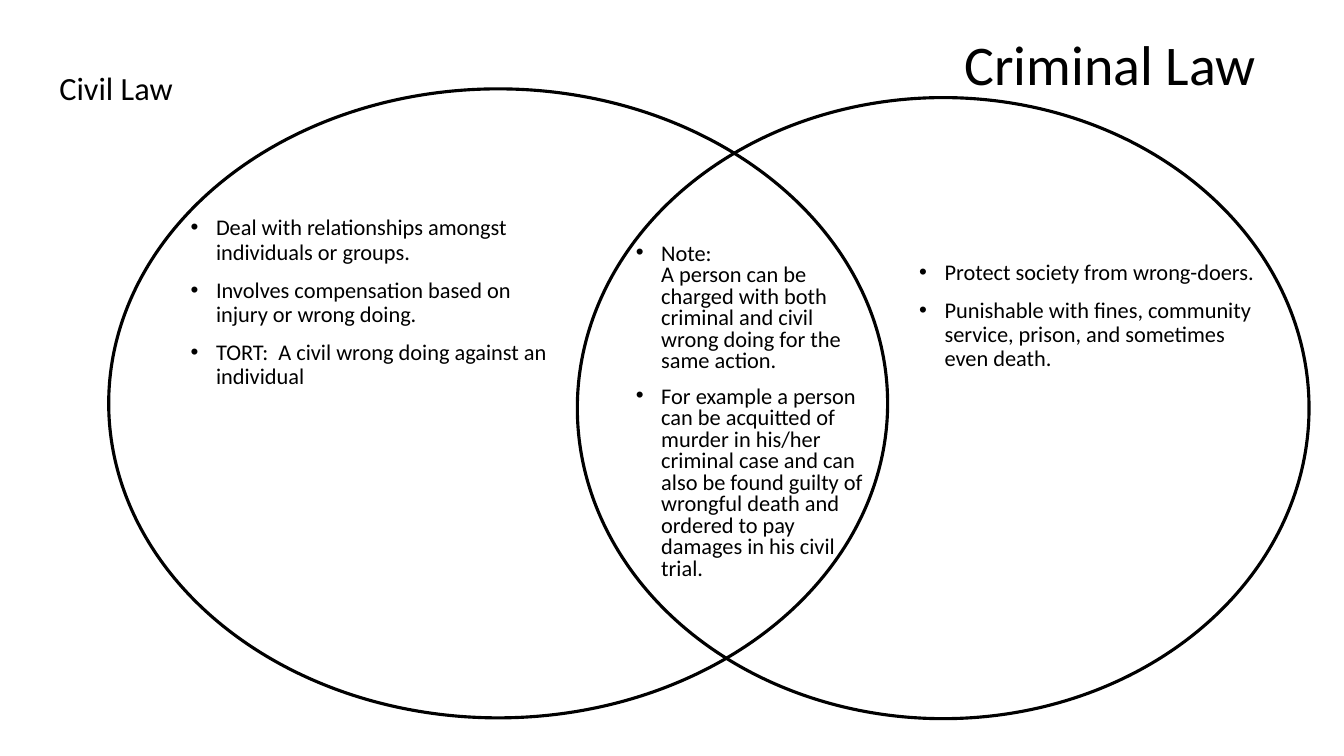
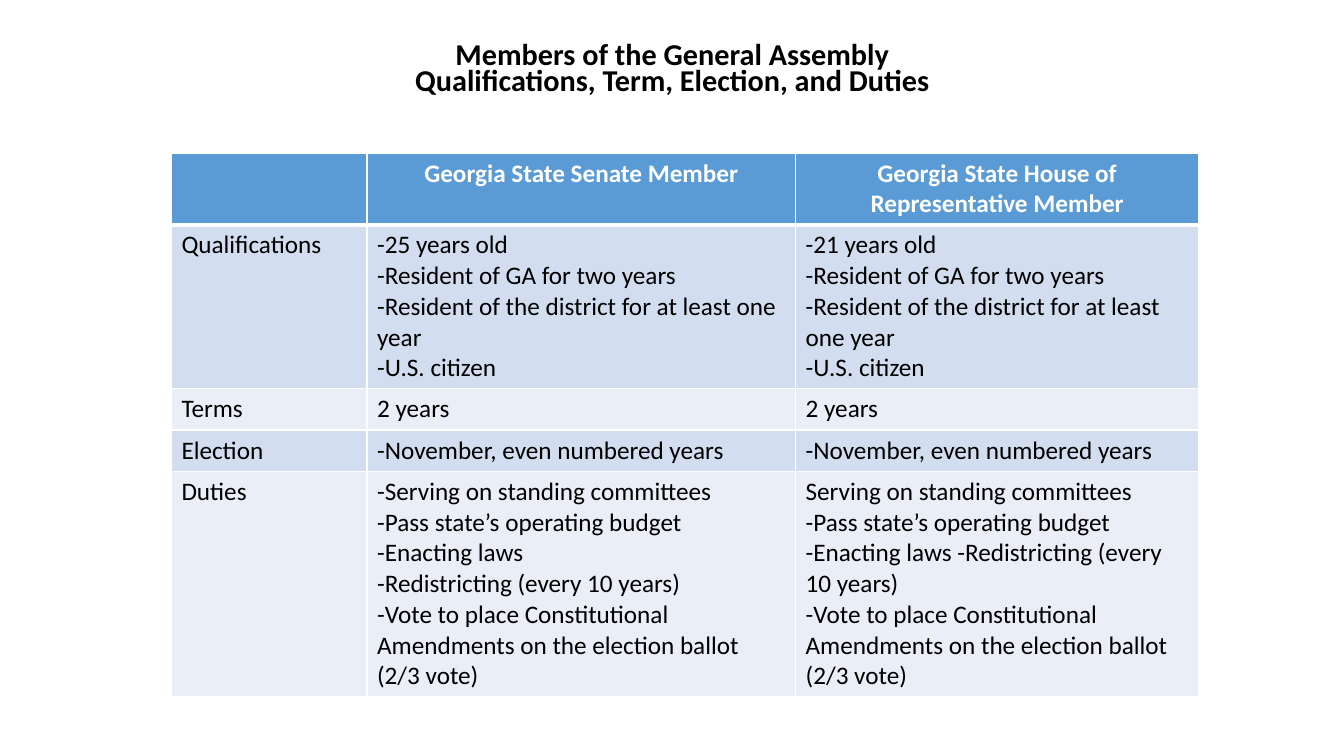
from dataclasses import dataclass

from lxml import etree
from pptx import Presentation
from pptx.dml.color import RGBColor
from pptx.enum.shapes import MSO_SHAPE
from pptx.enum.text import MSO_ANCHOR, MSO_AUTO_SIZE, PP_ALIGN
from pptx.oxml.ns import qn
from pptx.util import Cm, Pt

BLACK = RGBColor(0x00, 0x00, 0x00)
WHITE = RGBColor(0xFF, 0xFF, 0xFF)
HEADER_BLUE = RGBColor(0x5B, 0x9B, 0xD5)
BAND_DARK = RGBColor(0xD2, 0xDE, 0xEF)
BAND_LIGHT = RGBColor(0xEA, 0xEF, 0xF7)

FONT = "Calibri"
LEFT, CENTER = PP_ALIGN.LEFT, PP_ALIGN.CENTER
TOP, MIDDLE = MSO_ANCHOR.TOP, MSO_ANCHOR.MIDDLE
NO_AUTOFIT = MSO_AUTO_SIZE.NONE
OVAL = MSO_SHAPE.OVAL

TITLE_ONLY_LAYOUT = 5
COMPARISON_LAYOUT = 4
BULLET_INDENT = Cm(0.64)
THIN, THICK = Pt(1), Pt(3)


@dataclass(frozen=True)
class Box:
    """Position and size in centimetres."""
    left: float
    top: float
    width: float
    height: float

    def place(self, shape) -> None:
        shape.left, shape.top = Cm(self.left), Cm(self.top)
        shape.width, shape.height = Cm(self.width), Cm(self.height)


@dataclass(frozen=True)
class PointList:
    placeholder: int
    box: Box
    spacing: float
    points: tuple[str, ...]


@dataclass(frozen=True)
class Heading:
    placeholder: int
    box: Box
    text: str
    size: float
    spacing: float
    anchor: MSO_ANCHOR


LAW_CIRCLES = (Box(2.74, 2.24, 19.63, 15.85), Box(14.55, 2.46, 18.44, 15.65))

LAW_HEADINGS = (
    Heading(0, Box(1.24, 1.85, 5.94, 1.04), "Civil Law", 23.1, 0.7, TOP),
    Heading(1, Box(24.05, 1.19, 7.9, 1.04), "Criminal Law", 40, 0.9, MIDDLE),
)

LAW_LISTS = (
    PointList(2, Box(4.55, 5.33, 9.93, 9.96), 0.9, (
        "Deal with relationships amongst individuals or groups.",
        "Involves compensation based on injury or wrong doing.",
        "TORT:  A civil wrong doing against an individual",
    )),
    PointList(3, Box(15.77, 6.02, 6.25, 8.89), 0.8, (
        "Note:\nA person can be charged with both criminal and civil "
        "wrong doing for the same action.",
        "For example a person can be acquitted of murder in his/her criminal "
        "case and can also be found guilty of wrongful death and ordered to "
        "pay damages in his civil trial.",
    )),
    PointList(4, Box(22.91, 6.45, 9.02, 10.64), 0.9, (
        "Protect society from wrong-doers.",
        "Punishable with fines, community service, prison, and sometimes "
        "even death.",
    )),
)

ASSEMBLY_TITLE = ("Members of the General Assembly\n"
                  "Qualifications, Term, Election, and Duties")
ASSEMBLY_TITLE_BOX = Box(2.34, 1.02, 29.21, 1.7)
COLUMN_WIDTHS = (4.93, 10.8, 10.16)
ROW_HEIGHT = 1.04
RESIDENCY = (
    "-Resident of GA for two years",
    "-Resident of the district for at least one year",
    "-U.S. citizen",
)
BUDGET = "-Pass state’s operating budget"
AMENDMENTS = ("-Vote to place Constitutional Amendments on the election "
              "ballot (2/3 vote)")
ELECTION = ("-November, even numbered years",)
ASSEMBLY_ROWS = (
    ((), ("Georgia State Senate Member",),
     ("Georgia State House of Representative Member",)),
    (("Qualifications",), ("-25 years old", *RESIDENCY),
     ("-21 years old", *RESIDENCY)),
    (("Terms",), ("2 years",), ("2 years",)),
    (("Election",), ELECTION, ELECTION),
    (("Duties",),
     ("-Serving on standing committees", BUDGET, "-Enacting laws",
      "-Redistricting (every 10 years)", AMENDMENTS),
     ("Serving on standing committees", BUDGET,
      "-Enacting laws -Redistricting (every 10 years)", AMENDMENTS)),
)


def set_bullet(paragraph, bulleted: bool) -> None:
    properties = paragraph._p.get_or_add_pPr()
    indent = BULLET_INDENT if bulleted else 0
    properties.set("marL", str(indent))
    properties.set("indent", str(-indent))
    if bulleted:
        etree.SubElement(properties, qn("a:buFont"), typeface="Arial")
        etree.SubElement(properties, qn("a:buChar"), char="•")
    else:
        etree.SubElement(properties, qn("a:buNone"))


def write_text(frame, paragraphs: tuple[str, ...], *, size: float,
               color: RGBColor = BLACK, bold: bool = False,
               align: PP_ALIGN = LEFT, spacing: float = 1.0,
               before: float = 0, bulleted: bool = False) -> None:
    """Fill a text frame; a newline inside a paragraph is a line break."""
    for index, text in enumerate(paragraphs):
        paragraph = frame.add_paragraph() if index else frame.paragraphs[0]
        paragraph.text = text
        paragraph.alignment = align
        paragraph.line_spacing = spacing
        paragraph.space_before = Pt(before)
        set_bullet(paragraph, bulleted)
        for run in paragraph.runs:
            run.font.name = FONT
            run.font.size = Pt(size)
            run.font.bold = bold
            run.font.color.rgb = color


def open_placeholder(slide, index: int, box: Box, anchor: MSO_ANCHOR = TOP):
    """Move a placeholder and return its text frame."""
    placeholder = slide.placeholders[index]
    box.place(placeholder)
    frame = placeholder.text_frame
    frame.word_wrap = True
    frame.auto_size = NO_AUTOFIT
    frame.vertical_anchor = anchor
    return frame


def draw_circle(slide, box: Box) -> None:
    circle = slide.shapes.add_shape(OVAL, Cm(box.left), Cm(box.top),
                                    Cm(box.width), Cm(box.height))
    circle.shadow.inherit = False
    circle.fill.background()
    circle.line.color.rgb = BLACK
    circle.line.width = Pt(2.25)


def set_borders(cell, top: int, bottom: int) -> None:
    """Draw white borders; must run before the cell fill is set."""
    properties = cell._tc.get_or_add_tcPr()
    widths = {"a:lnL": THIN, "a:lnR": THIN, "a:lnT": top, "a:lnB": bottom}
    for tag, width in widths.items():
        line = etree.SubElement(properties, qn(tag), w=str(width))
        fill = etree.SubElement(line, qn("a:solidFill"))
        etree.SubElement(fill, qn("a:srgbClr"), val=str(WHITE))


def row_fill(row: int) -> RGBColor:
    if row == 0:
        return HEADER_BLUE
    return BAND_DARK if row % 2 else BAND_LIGHT


def draw_assembly_table(slide) -> None:
    row_count = len(ASSEMBLY_ROWS)
    table = slide.shapes.add_table(
        row_count, len(COLUMN_WIDTHS), Cm(4.32), Cm(3.86),
        Cm(sum(COLUMN_WIDTHS)), Cm(ROW_HEIGHT * row_count)).table
    for column, width in zip(table.columns, COLUMN_WIDTHS):
        column.width = Cm(width)
    for row, contents in enumerate(ASSEMBLY_ROWS):
        table.rows[row].height = Cm(ROW_HEIGHT)
        is_header = row == 0
        for column, lines in enumerate(contents):
            cell = table.cell(row, column)
            set_borders(cell, top=THICK if row == 1 else THIN,
                        bottom=THICK if is_header else THIN)
            cell.fill.solid()
            cell.fill.fore_color.rgb = row_fill(row)
            write_text(cell.text_frame, lines, size=18, bold=is_header,
                       color=WHITE if is_header else BLACK,
                       align=CENTER if is_header else LEFT)


def build_law_slide(deck) -> None:
    slide = deck.slides.add_slide(deck.slide_layouts[COMPARISON_LAYOUT])
    for group in LAW_LISTS:
        frame = open_placeholder(slide, group.placeholder, group.box)
        write_text(frame, group.points, size=16, spacing=group.spacing,
                   before=10, bulleted=True)
    for box in LAW_CIRCLES:
        draw_circle(slide, box)
    for heading in LAW_HEADINGS:
        frame = open_placeholder(slide, heading.placeholder, heading.box,
                                 heading.anchor)
        write_text(frame, (heading.text,), size=heading.size,
                   spacing=heading.spacing)


def build_assembly_slide(deck) -> None:
    slide = deck.slides.add_slide(deck.slide_layouts[TITLE_ONLY_LAYOUT])
    frame = open_placeholder(slide, 0, ASSEMBLY_TITLE_BOX)
    write_text(frame, (ASSEMBLY_TITLE,), size=21.6, bold=True, align=CENTER,
               spacing=0.7)
    draw_assembly_table(slide)


def main() -> None:
    deck = Presentation()
    deck.slide_width, deck.slide_height = Cm(33.87), Cm(19.05)
    build_law_slide(deck)
    build_assembly_slide(deck)
    deck.save("out.pptx")


if __name__ == "__main__":
    main()
